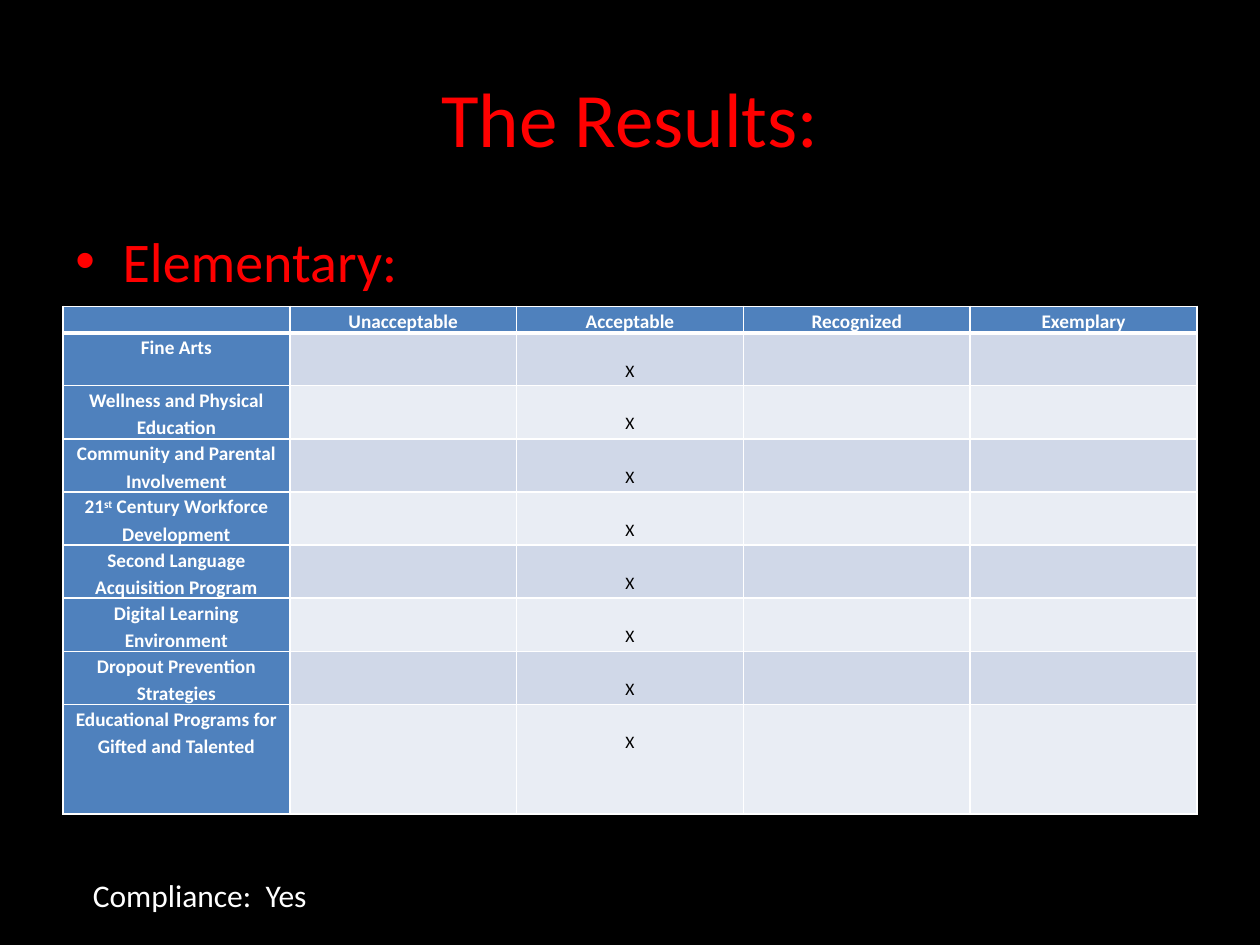
from dataclasses import dataclass

from pptx import Presentation
from pptx.dml.color import RGBColor as RGB
from pptx.enum.text import MSO_ANCHOR as Anchor, PP_ALIGN as Align
from pptx.oxml.ns import qn
from pptx.util import Pt
from lxml.etree import SubElement


@dataclass(frozen=True)
class Theme:
    font: str = "Calibri"
    background: str = "000000"
    accent: str = "FF0000"
    white: str = "FFFFFF"
    mark: str = "000000"
    header: str = "4F81BD"
    bands: tuple = ("D0D8E8", "E9EDF4")
    title_size: int = 44
    bullet_size: int = 32
    note_size: int = 18
    label_size: int = 11
    mark_size: int = 10


THEME = Theme()
LEVELS = ["Unacceptable", "Acceptable", "Recognized", "Exemplary"]
# Each area with its rating; a "^" pair encloses superscript
RATINGS = [
    ("Fine Arts", "Acceptable"),
    ("Wellness and Physical Education", "Acceptable"),
    ("Community and Parental Involvement", "Acceptable"),
    ("21^st^ Century Workforce Development", "Acceptable"),
    ("Second Language Acquisition Program", "Acceptable"),
    ("Digital Learning Environment", "Acceptable"),
    ("Dropout Prevention Strategies", "Acceptable"),
    ("Educational Programs for Gifted and Talented", "Acceptable"),
]


def write(frame, text, *, size, color, bold=False, align=Align.LEFT,
          spacing=None, before=None):
    """Write one paragraph into a text frame and return it."""
    paragraph = frame.paragraphs[0]
    paragraph.alignment = align
    if spacing is not None:
        paragraph.line_spacing = spacing
    if before is not None:
        paragraph.space_before = Pt(before)
    for index, part in enumerate(text.split("^")):
        run = paragraph.add_run()
        run.text = part
        font = run.font
        font.name, font.size, font.bold = THEME.font, Pt(size), bold
        font.color.rgb = RGB.from_string(color)
        if index % 2:
            font._element.set("baseline", "30000")
    return paragraph


def add_title(slide, left, top, width, height):
    title = slide.shapes.title
    title.left, title.top = Pt(left), Pt(top)
    title.width, title.height = Pt(width), Pt(height)
    title.text_frame.vertical_anchor = Anchor.MIDDLE
    write(title.text_frame, "The Results:", size=THEME.title_size,
          color=THEME.accent, align=Align.CENTER)


def add_level_bullet(slide, left, top, width, height):
    box = slide.shapes.add_textbox(Pt(left), Pt(top), Pt(width), Pt(height))
    box.text_frame.word_wrap = True
    bullet = write(box.text_frame, "Elementary:", size=THEME.bullet_size,
                   color=THEME.accent, before=6.4)
    # Hanging bullet
    properties = bullet._p.get_or_add_pPr()
    properties.set("marL", str(Pt(27)))
    properties.set("indent", str(Pt(-27)))
    SubElement(properties, qn("a:buFont")).set("typeface", "Arial")
    SubElement(properties, qn("a:buChar")).set("char", "•")


def format_cell(cell, fill, bottom=1):
    """Set the borders, fill and margins of a cell."""
    properties = cell._tc.get_or_add_tcPr()
    for side, weight in (("L", 1), ("R", 1), ("T", 1), ("B", bottom)):
        line = SubElement(properties, qn(f"a:ln{side}"), w=str(Pt(weight)))
        solid = SubElement(line, qn("a:solidFill"))
        SubElement(solid, qn("a:srgbClr")).set("val", THEME.white)
    cell.fill.solid()
    cell.fill.fore_color.rgb = RGB.from_string(fill)
    cell.margin_left = cell.margin_right = Pt(5)
    cell.margin_top = cell.margin_bottom = 0


def fill_cell(cell, text, *, size, **style):
    """Write centred text, or keep an empty cell's line at the given size."""
    if text:
        write(cell.text_frame, text, size=size, align=Align.CENTER,
              spacing=1.15, **style)
    else:
        end = SubElement(cell.text_frame.paragraphs[0]._p, qn("a:endParaRPr"))
        end.set("sz", str(size * 100))


def add_ratings_table(slide, left, top, width, height):
    header_height, row_height = 14.4, 30.2
    last_height = height - header_height - row_height * (len(RATINGS) - 1)
    table = slide.shapes.add_table(len(RATINGS) + 1, len(LEVELS) + 1, Pt(left),
                                   Pt(top), Pt(width), Pt(height)).table
    for column in table.columns:
        column.width = Pt(width / len(table.columns))
    heights = [header_height] + [row_height] * (len(RATINGS) - 1) + [last_height]
    for row, row_points in zip(table.rows, heights):
        row.height = Pt(row_points)

    label = dict(size=THEME.label_size, color=THEME.white, bold=True)
    # Header row
    for column, level in enumerate([""] + LEVELS):
        cell = table.cell(0, column)
        format_cell(cell, THEME.header, bottom=3)
        fill_cell(cell, level, **label)
    # Area labels and marks
    for row, (area, rating) in enumerate(RATINGS, start=1):
        area_cell = table.cell(row, 0)
        format_cell(area_cell, THEME.header)
        fill_cell(area_cell, area, **label)
        for column, level in enumerate(LEVELS, start=1):
            cell = table.cell(row, column)
            format_cell(cell, THEME.bands[(row - 1) % 2])
            cell.margin_top = Pt(14)  # the mark sits on the second line
            fill_cell(cell, "X" if level == rating else "",
                      size=THEME.mark_size, color=THEME.mark)


def add_compliance_note(slide, left, top, width, height):
    box = slide.shapes.add_textbox(Pt(left), Pt(top), Pt(width), Pt(height))
    box.text_frame.word_wrap = False
    write(box.text_frame, "Compliance:  Yes", size=THEME.note_size,
          color=THEME.white)


def main():
    deck = Presentation()
    deck.slide_width, deck.slide_height = Pt(720), Pt(540)
    slide = deck.slides.add_slide(deck.slide_layouts[5])  # title only
    slide.background.fill.solid()
    slide.background.fill.fore_color.rgb = RGB.from_string(THEME.background)

    add_title(slide, 36, 21.6, 648, 90)
    add_level_bullet(slide, 36, 126, 648, 388.8)
    add_ratings_table(slide, 36, 175, 648, 288.5)
    add_compliance_note(slide, 46, 497, 138, 29)
    deck.save("out.pptx")


if __name__ == "__main__":
    main()
